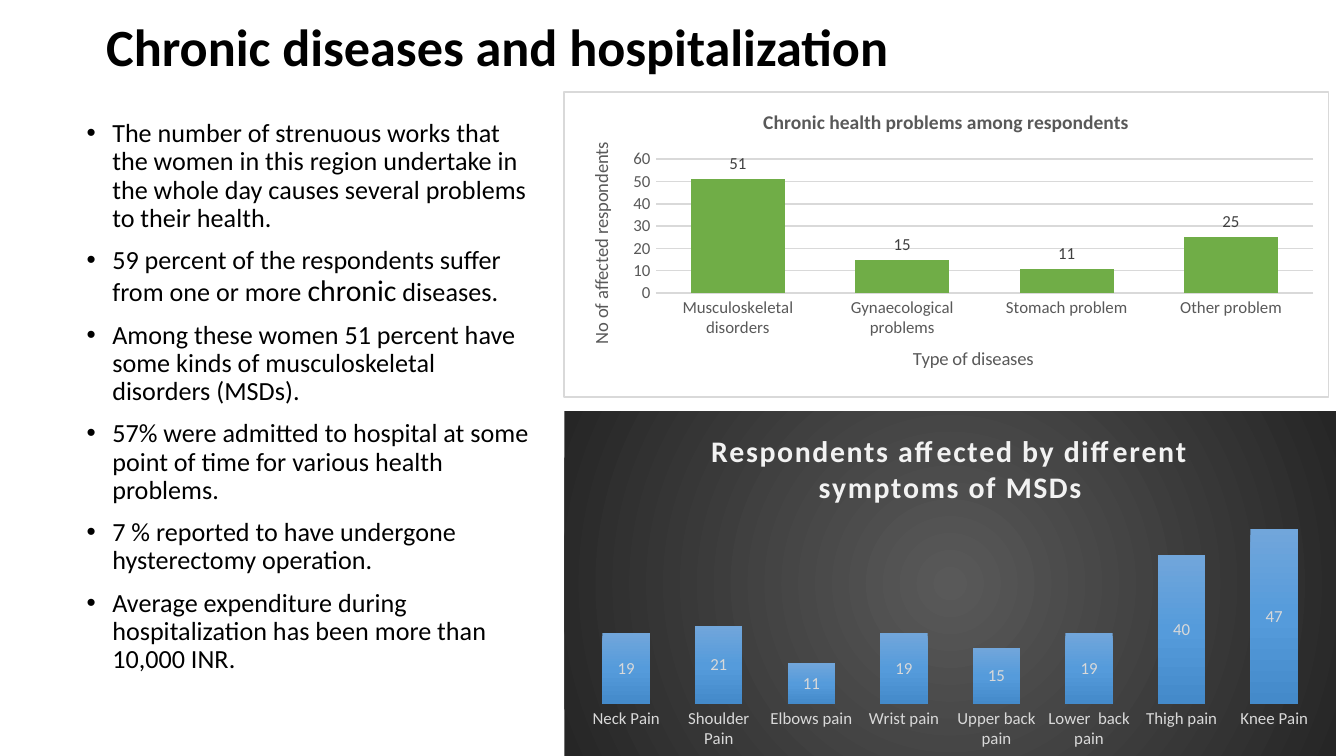
import pptx
import pptx.chart.data
import pptx.dml.color
import pptx.enum.chart
import pptx.enum.text
import pptx.oxml
import pptx.oxml.ns
import pptx.util

WIDTH = 10
HEIGHT = WIDTH * 9 / 16
FONT = "Calibri"
GREY, PALE = "595959", "D9D9D9"
POINTS = [
    ["The number of strenuous works that the women in this region undertake in "
     "the whole day causes several problems to their health."],
    ["59 percent of the respondents suffer from one or more ", ("chronic", 16), " diseases."],
    ["Among these women 51 percent have some kinds of musculoskeletal disorders (MSDs)."],
    ["57% were admitted to hospital at some point of time for various health problems."],
    ["7 % reported to have undergone hysterectomy operation."],
    ["Average expenditure during hospitalization has been more than 10,000 INR."],
]
PROBLEMS = {"Musculoskeletal disorders": 51, "Gynaecological problems": 15,
            "Stomach problem": 11, "Other problem": 25}
SYMPTOMS = {"Neck Pain": 19, "Shoulder Pain": 21, "Elbows pain": 11, "Wrist pain": 19,
            "Upper back pain": 15, "Lower  back pain": 19, "Thigh pain": 40, "Knee Pain": 47}


def color(code):
    """Turn a hex string into a colour."""
    return pptx.dml.color.RGBColor.from_string(code)


def area(left, top, width, height):
    """Turn percentages of the slide into lengths."""
    shares = ((left, WIDTH), (top, HEIGHT), (width, WIDTH), (height, HEIGHT))
    return [pptx.util.Inches(share * side / 100) for share, side in shares]


def element(tag, inner="", **attributes):
    """Build an XML element in the drawing and chart namespaces."""
    values = "".join(f' {name}="{value}"' for name, value in attributes.items())
    names = pptx.oxml.ns.nsdecls("a", "c")
    return pptx.oxml.parse_xml(f"<{tag} {names}{values}>{inner}</{tag}>")


def gradient(stops, direction):
    """Build a gradient fill from percentages and colours."""
    marks = "".join(f'<a:gs pos="{place * 1000}"><a:srgbClr val="{code}"/></a:gs>'
                    for place, code in stops)
    return element("a:gradFill", f"<a:gsLst>{marks}</a:gsLst>{direction}", rotWithShape=1)


def style(font, size, code, bold=False):
    """Format a font."""
    font.name, font.size, font.bold = FONT, pptx.util.Pt(size), bold
    font.color.rgb = color(code)


def write(para, text, size=14, code="000000", bold=False, spacing=0):
    """Add a formatted span of text to a paragraph."""
    span = para.add_run()
    span.text = text
    style(span.font, size, code, bold)
    if spacing:
        span.font._element.set("spc", str(spacing * 100))


def add_title(page, text):
    """Place and fill the title placeholder."""
    title = page.shapes.title
    title.left, title.top, title.width, title.height = area(6.9, 1.1, 86.2, 11)
    frame = title.text_frame
    frame.vertical_anchor = pptx.enum.text.MSO_ANCHOR.MIDDLE
    para = frame.paragraphs[0]
    para.alignment = pptx.enum.text.PP_ALIGN.LEFT
    para.line_spacing = 0.9
    write(para, text, size=28, bold=True)


def add_bullets(page, points):
    """Add the bulleted findings."""
    frame = page.shapes.add_textbox(*area(5.47, 15, 35.5, 63.5)).text_frame
    frame.word_wrap = True
    for index, spans in enumerate(points):
        para = frame.add_paragraph() if index else frame.paragraphs[0]
        para.line_spacing = 0.9
        para.space_before = pptx.util.Pt(7.5 if index else 0)
        properties = para._p.get_or_add_pPr()
        indent = pptx.util.Inches(0.19)
        properties.set("marL", str(indent))
        properties.set("indent", str(-indent))
        properties.append(element("a:buFont", typeface="Arial"))
        properties.append(element("a:buChar", char="•"))
        for span in spans:
            text, size = (span, 14) if isinstance(span, str) else span
            write(para, text, size=size)


def set_plot_area(chart, *shares):
    """Fix the inner plot area as shares of the chart."""
    plot_area = chart.element.find(".//" + pptx.oxml.ns.qn("c:plotArea"))
    for layout in plot_area.findall(pptx.oxml.ns.qn("c:layout")):
        plot_area.remove(layout)
    inner = '<c:layoutTarget val="inner"/><c:xMode val="edge"/><c:yMode val="edge"/>'
    inner += "".join(f'<c:{name} val="{share}"/>' for name, share in zip("xywh", shares))
    plot_area.insert(0, element("c:layout", f"<c:manualLayout>{inner}</c:manualLayout>"))


def set_background(chart, fill, line):
    """Give the chart frame its fill and line."""
    properties = element("c:spPr")
    properties.append(fill)
    properties.append(line)
    chart.element.find(pptx.oxml.ns.qn("c:chart")).addnext(properties)


def add_columns(page, kind, place, data, title, top, gap, overlap, text_code, label_code):
    """Add a column chart with its title, axes and labels."""
    chart_data = pptx.chart.data.CategoryChartData()
    chart_data.categories = list(data)
    chart_data.add_series("Series 1", list(data.values()))
    chart = page.shapes.add_chart(kind, *area(*place), chart_data).chart
    style(chart.font, 10, "000000")
    chart.has_legend = False
    chart.has_title = True
    chart.chart_title.include_in_layout = False
    write(chart.chart_title.text_frame.paragraphs[0], **title)
    for axis in (chart.category_axis, chart.value_axis):
        axis.major_tick_mark = axis.minor_tick_mark = pptx.enum.chart.XL_TICK_MARK.NONE
        axis.has_major_gridlines = False
        axis.format.line.fill.background()
        style(axis.tick_labels.font, 9, text_code)
    chart.value_axis.minimum_scale, chart.value_axis.maximum_scale = 0, top
    chart.value_axis.major_unit = 10
    plot = chart.plots[0]
    plot.gap_width, plot.overlap, plot.vary_by_categories = gap, overlap, False
    plot.has_data_labels = True
    plot.data_labels.show_value = True
    style(plot.data_labels.font, 9, label_code)
    return chart


def set_line(line):
    """Draw a thin pale line."""
    line.color.rgb = color(PALE)
    line.width = pptx.util.Pt(0.75)


def add_problems(page):
    """Add the chart of chronic health problems."""
    chart = add_columns(
        page, pptx.enum.chart.XL_CHART_TYPE.COLUMN_CLUSTERED, (41.9, 12.1, 57, 40.5),
        PROBLEMS, dict(text="Chronic health problems among respondents", size=10.5,
                       code=GREY, bold=True),
        top=60, gap=75, overlap=40, text_code=GREY, label_code="404040")
    set_plot_area(chart, 0.12, 0.22, 0.86, 0.44)
    white = element("a:solidFill", '<a:srgbClr val="FFFFFF"/>')
    border = f'<a:solidFill><a:srgbClr val="{PALE}"/></a:solidFill>'
    set_background(chart, white, element("a:ln", border, w=pptx.util.Pt(0.75)))
    names = ((chart.category_axis, "Type of diseases"),
             (chart.value_axis, "No of affected respondents"))
    for axis, name in names:
        write(axis.axis_title.text_frame.paragraphs[0], name, size=10, code=GREY)
    set_line(chart.category_axis.format.line)
    chart.value_axis.has_major_gridlines = True
    set_line(chart.value_axis.major_gridlines.format.line)
    plot = chart.plots[0]
    plot.data_labels.position = pptx.enum.chart.XL_LABEL_POSITION.OUTSIDE_END
    fill = plot.series[0].format.fill
    fill.solid()
    fill.fore_color.rgb = color("70AD47")


def add_symptoms(page):
    """Add the chart of musculoskeletal symptoms."""
    chart = add_columns(
        page, pptx.enum.chart.XL_CHART_TYPE.COLUMN_STACKED, (42, 54.4, 57.4, 45.6),
        SYMPTOMS, dict(text="Respondents affected by different symptoms of MSDs", size=16,
                       code="F2F2F2", bold=True, spacing=1),
        top=50, gap=95, overlap=100, text_code=PALE, label_code=PALE)
    set_plot_area(chart, 0.02, 0.31, 0.96, 0.54)
    circle = '<a:path path="circle"><a:fillToRect l="50000" t="50000" r="50000" b="50000"/></a:path>'
    set_background(chart, gradient([(0, GREY), (100, "262626")], circle),
                   element("a:ln", "<a:noFill/>"))
    chart.value_axis.visible = False
    series = chart.element.find(".//" + pptx.oxml.ns.qn("c:ser"))
    stops = [(0, "71A6DB"), (50, "559BDB"), (100, "448ACA")]
    series.get_or_add_spPr().append(gradient(stops, '<a:lin ang="5400000" scaled="0"/>'))


def main():
    """Build and save the slide."""
    deck = pptx.Presentation()
    deck.slide_width, deck.slide_height = pptx.util.Inches(WIDTH), pptx.util.Inches(HEIGHT)
    page = deck.slides.add_slide(deck.slide_layouts[5])
    add_title(page, "Chronic diseases and hospitalization")
    add_bullets(page, POINTS)
    add_symptoms(page)
    add_problems(page)
    deck.save("out.pptx")


if __name__ == "__main__":
    main()
